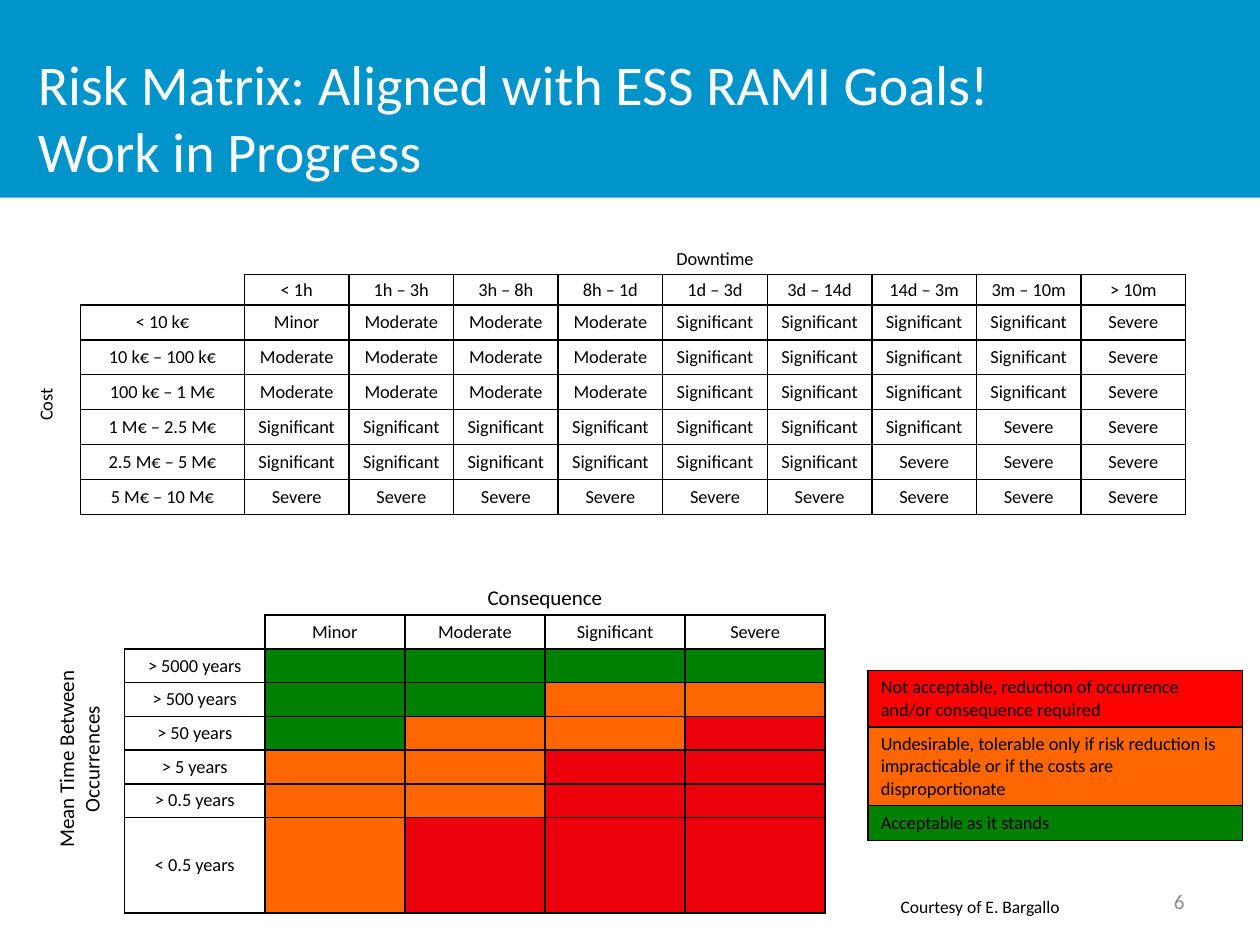
from collections import namedtuple

from lxml.etree import SubElement
from pptx import Presentation
from pptx.dml.color import RGBColor
from pptx.enum.shapes import MSO_SHAPE as Preset
from pptx.enum.text import MSO_ANCHOR as Anchor, MSO_AUTO_SIZE as AutoSize, PP_ALIGN as Align
from pptx.oxml.ns import qn
from pptx.util import Inches, Pt

COL, ROW = Inches(0.1), Inches(0.075)
Box = namedtuple("Box", "left top width height", defaults=(0, 0))

BLUE = RGBColor(0x00, 0x94, 0xCA)
WHITE = RGBColor(0xFF, 0xFF, 0xFF)
BLACK = RGBColor(0x00, 0x00, 0x00)
GREY = RGBColor(0x8C, 0x8C, 0x8C)
GREEN = RGBColor(0x00, 0x80, 0x00)
ORANGE = RGBColor(0xFF, 0x66, 0x00)
CRIMSON = RGBColor(0xEB, 0x00, 0x0C)
RED = RGBColor(0xFF, 0x00, 0x00)

RISK = {"G": GREEN, "O": ORANGE, "R": CRIMSON}
SEVERITY = {"m": "Minor", "M": "Moderate", "S": "Significant", "X": "Severe"}
PLAIN_STYLE = "{2D5ABB26-0587-4C30-8999-92F81FD0307C}"

DOWNTIMES = ["< 1h", "1h – 3h", "3h – 8h", "8h – 1d", "1d – 3d",
             "3d – 14d", "14d – 3m", "3m – 10m", "> 10m"]
COSTS = {"< 10 k€": "mMMMSSSSX", "10 k€ – 100 k€": "MMMMSSSSX",
         "100 k€ – 1 M€": "MMMMSSSSX", "1 M€ – 2.5 M€": "SSSSSSSXX",
         "2.5 M€ – 5 M€": "SSSSSSXXX", "5 M€ – 10 M€": "XXXXXXXXX"}
OCCURRENCES = {"> 5000 years": "GGGG", "> 500 years": "GGOO", "> 50 years": "GOOR",
               "> 5 years": "OORR", "> 0.5 years": "OORR", "< 0.5 years": "ORRR"}
LEGEND = {"Not acceptable, reduction of occurrence and/or consequence required": RED,
          "Undesirable, tolerable only if risk reduction is impracticable "
          "or if the costs are disproportionate": ORANGE,
          "Acceptable as it stands": GREEN}


def place(box):
    """Turn a box of grid columns and rows into lengths."""
    return (round(box.left * COL), round(box.top * ROW),
            round(box.width * COL), round(box.height * ROW))


def apply(target, formats):
    """Set every attribute named in a dict of format values."""
    for name, value in formats.items():
        setattr(target, name, value)


def write(frame, text, size, color=BLACK, align=Align.LEFT):
    """Put one formatted paragraph in a text frame."""
    paragraph = frame.paragraphs[0]
    paragraph.text = text
    paragraph.alignment = align
    for run in paragraph.runs:
        apply(run.font, {"size": Pt(size), "name": "Calibri"})
        run.font.color.rgb = color
    if not text:
        SubElement(paragraph._p, qn("a:endParaRPr"), sz=str(round(size * 100)))


def draw_borders(cell):
    """Draw a thin black line on all sides of a cell."""
    properties = cell._tc.get_or_add_tcPr()
    for side in ("lnL", "lnR", "lnT", "lnB"):
        line = SubElement(properties, qn(f"a:{side}"), w=str(Pt(1)))
        fill = SubElement(line, qn("a:solidFill"))
        SubElement(fill, qn("a:srgbClr"), val=str(BLACK))


def fill_cell(cell, text="", size=10.5, color=None, align=Align.CENTER,
              border=True, side=0.07, pad=0):
    """Format one table cell and write its text."""
    apply(cell, {"vertical_anchor": Anchor.MIDDLE,
                 "margin_left": Inches(side), "margin_right": Inches(side),
                 "margin_top": Inches(pad), "margin_bottom": Inches(pad)})
    write(cell.text_frame, text, size, align=align)
    if border:
        draw_borders(cell)
    if color is None:
        cell.fill.background()
    else:
        cell.fill.solid()
        cell.fill.fore_color.rgb = color


def add_grid(slide, box, widths, heights):
    """Add a table without style whose columns and rows follow the grid."""
    box = box._replace(width=sum(widths), height=sum(heights))
    table = slide.shapes.add_table(len(heights), len(widths), *place(box)).table
    apply(table, {"first_row": False, "horz_banding": False})
    table._tbl.tblPr.find(qn("a:tableStyleId")).text = PLAIN_STYLE
    for column, width in zip(table.columns, widths):
        column.width = round(width * COL)
    for row, height in zip(table.rows, heights):
        row.height = round(height * ROW)
    return table


def add_matrix(slide, box, widths, heights, axes, headings, rows,
               side_start, axis_size, label_format, cell_format):
    """Build a matrix with a heading axis above and a turned axis at the left."""
    table = add_grid(slide, box, widths, heights)
    last_row, last_column = len(heights) - 1, len(widths) - 1
    top_axis, side_axis = axes
    table.cell(0, 2).merge(table.cell(0, last_column))
    table.cell(side_start, 0).merge(table.cell(last_row, 0))
    for row in range(len(heights)):
        for column in range(2 if row < 2 else 1):
            if (row, column) != (side_start, 0):
                fill_cell(table.cell(row, column), border=False)
    fill_cell(table.cell(0, 2), top_axis, axis_size, border=False)
    turned = table.cell(side_start, 0)
    fill_cell(turned, side_axis, axis_size, border=False)
    turned._tc.tcPr.set("vert", "vert270")
    turned.text_frame.paragraphs[0]._p.get_or_add_pPr().set("marL", str(Inches(0.08)))
    for column, heading in enumerate(headings, 2):
        fill_cell(table.cell(1, column), heading)
    for row, (label, codes) in enumerate(rows.items(), 2):
        fill_cell(table.cell(row, 1), label, **label_format)
        for column, code in enumerate(codes, 2):
            fill_cell(table.cell(row, column), **cell_format(code))


def add_legend(slide, box):
    """Build the list of risk classes on their colours."""
    table = add_grid(slide, box, [box.width], [4.27, 4.27, 3.07])
    for row, (meaning, color) in enumerate(LEGEND.items()):
        fill_cell(table.cell(row, 0), meaning, color=color, align=Align.LEFT,
                  side=0.1, pad=0.05)


def add_header(slide, box):
    """Draw the blue band and set the title on it."""
    band = slide.shapes.add_shape(Preset.RECTANGLE, *place(box))
    band.shadow.inherit = False
    band.fill.solid()
    band.fill.fore_color.rgb = BLUE
    band.line.fill.background()
    slide.shapes._spTree.insert(2, band._element)
    title = slide.shapes.title
    left, top, width, height = place(
        Box(box.left + 2, box.top + 4, box.width - 17.3, box.height - 4.27))
    apply(title, {"left": left, "top": top, "width": width, "height": height})
    apply(title.text_frame, {"vertical_anchor": Anchor.MIDDLE, "word_wrap": True,
                             "auto_size": AutoSize.NONE})
    write(title.text_frame, "Risk Matrix: Aligned with ESS RAMI Goals!\vWork in Progress",
          32, WHITE)


def add_note(slide, box, text, frame_format, **text_format):
    """Add one line of small text."""
    note = slide.shapes.add_textbox(*place(box))
    apply(note.text_frame, frame_format)
    write(note.text_frame, text, **text_format)


def build_risk_slide(deck):
    """Place the header, both matrices, the legend and the footer."""
    slide = deck.slides.add_slide(deck.slide_layouts[5])
    add_header(slide, Box(0, 0, 100, 20.93))
    add_matrix(slide, Box(2.8, 25.87), [3.6, 13] + [8.3] * 9, [3.2] * 8,
               ("Downtime", "Cost"), DOWNTIMES, COSTS, 2, 10.5,
               {"side": 0.1, "pad": 0.05}, lambda code: {"text": SEVERITY[code]})
    add_note(slide, Box(71.7, 92.67, 23.3, 5.33), "6",
             {"vertical_anchor": Anchor.MIDDLE, "word_wrap": True},
             size=12, color=GREY, align=Align.RIGHT)
    add_matrix(slide, Box(4.3, 61.6), [5.6] + [11.12] * 5, [3.5] + [3.57] * 7,
               ("Consequence", "Mean Time Between Occurrences"), SEVERITY.values(),
               OCCURRENCES, 1, 12, {}, lambda code: {"color": RISK[code]})
    add_legend(slide, Box(68.9, 70.93, 29.7))
    add_note(slide, Box(70.5, 94.13, 14.9, 3.6), "Courtesy of E. Bargallo",
             {"word_wrap": False, "auto_size": AutoSize.SHAPE_TO_FIT_TEXT}, size=10)


def main():
    """Make the deck and save it."""
    deck = Presentation()
    deck.slide_width, deck.slide_height = 100 * COL, 100 * ROW
    build_risk_slide(deck)
    deck.save("out.pptx")


if __name__ == "__main__":
    main()
